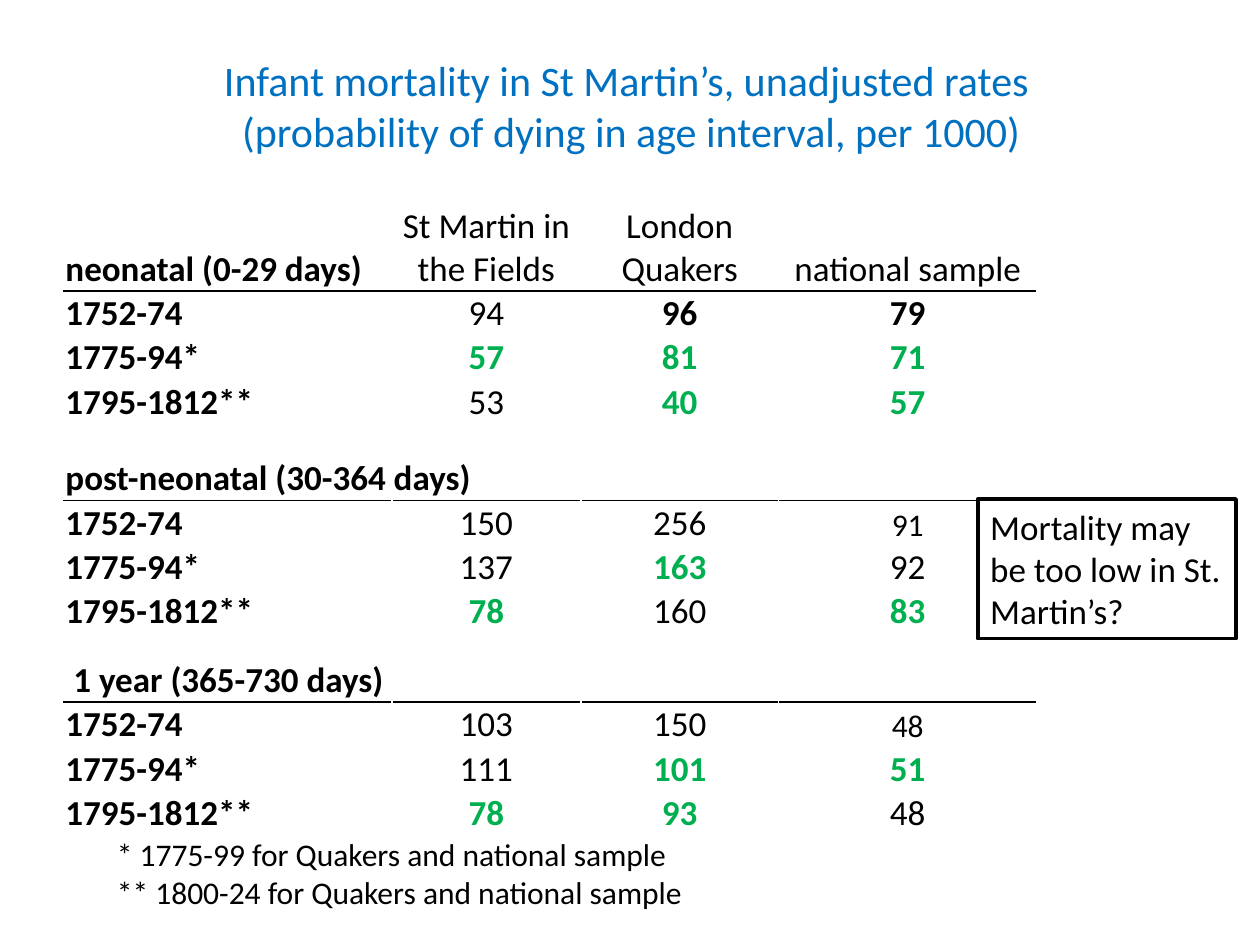
from dataclasses import dataclass
from lxml.etree import SubElement
from pptx import Presentation
from pptx.dml.color import RGBColor
from pptx.enum.shapes import MSO_SHAPE
from pptx.enum.text import MSO_ANCHOR, PP_ALIGN
from pptx.oxml import parse_xml
from pptx.oxml.ns import nsdecls, qn
from pptx.util import Inches, Pt


@dataclass(frozen=True)
class Theme:
    font: str = "Calibri"
    blue: RGBColor = RGBColor(0x00, 0x70, 0xC0)
    green: RGBColor = RGBColor(0x00, 0xB0, 0x50)
    black: RGBColor = RGBColor(0x00, 0x00, 0x00)
    white: RGBColor = RGBColor(0xFF, 0xFF, 0xFF)
    title: Pt = Pt(24)
    body: Pt = Pt(20)
    small: Pt = Pt(18)


theme = Theme()


def add_span(para, text, size, color=theme.black, bold=False):
    span = para.add_run()
    span.text = text
    span.font.name = theme.font
    span.font.size = size
    span.font.bold = bold
    span.font.color.rgb = color


def add_rule(cell, side):
    rule = parse_xml(f'<a:{side} w="12700" {nsdecls("a")}/>')
    fill = SubElement(rule, qn("a:solidFill"))
    SubElement(fill, qn("a:srgbClr"), val=str(theme.black))
    cell._tc.get_or_add_tcPr().insert(0, rule)


deck = Presentation()
deck.slide_width = Inches(10)
deck.slide_height = Inches(7.5)
page = deck.slides.add_slide(deck.slide_layouts[5])

title = page.shapes.title
title.left, title.top = Inches(0.51), Inches(0.21)
title.width, title.height = Inches(9), Inches(1.25)
title.text_frame.vertical_anchor = MSO_ANCHOR.MIDDLE
para = title.text_frame.paragraphs[0]
para.alignment = PP_ALIGN.CENTER
add_span(para, "Infant mortality in St Martin’s, unadjusted rates ", theme.title, theme.blue)
para.add_line_break()
add_span(para, "(probability of dying in age interval, per 1000)", theme.title, theme.blue)

styles = {
    "plain": (theme.body, theme.black, False),
    "bold": (theme.body, theme.black, True),
    "green": (theme.body, theme.green, True),
    "small": (theme.small, theme.black, False),
}
periods = ["1752-74", "1775-94*", "1795-1812**"]
headings = ["St Martin in the Fields", "London Quakers", "national sample"]
sections = [
    ("neonatal (0-29 days)", 0.29, 4, [
        [("94", "plain"), ("96", "bold"), ("79", "bold")],
        [("57", "green"), ("81", "green"), ("71", "green")],
        [("53", "plain"), ("40", "green"), ("57", "green")],
    ]),
    ("post-neonatal (30-364 days)", 0.61, 5, [
        [("150", "plain"), ("256", "plain"), ("91", "small")],
        [("137", "plain"), ("163", "green"), ("92", "plain")],
        [("78", "green"), ("160", "plain"), ("83", "green")],
    ]),
    (" 1 year (365-730 days)", 0.55, 4, [
        [("103", "plain"), ("150", "plain"), ("48", "small")],
        [("111", "plain"), ("101", "green"), ("51", "green")],
        [("78", "green"), ("93", "green"), ("48", "plain")],
    ]),
]
column_widths = [2.6, 1.5, 1.57, 2.05, 0.47]
section_size = 1 + len(periods)

frame = page.shapes.add_table(
    len(sections) * section_size, len(column_widths),
    Inches(0.51), Inches(1.62), Inches(8.19), Inches(4.9))
table = frame.table
table.first_row = False
table.horz_banding = False
for column, width in zip(table.columns, column_widths):
    column.width = Inches(width)
for row in table.rows:
    row.height = Inches(0.29)
for cell in table.iter_cells():
    cell.fill.background()
    cell.vertical_anchor = MSO_ANCHOR.BOTTOM
    cell.margin_left = cell.margin_right = cell.margin_top = Inches(0.01)
    cell.margin_bottom = 0

for section_index, (heading, height, ruled_columns, values) in enumerate(sections):
    top = section_index * section_size
    table.rows[top].height = Inches(height)
    for column in range(ruled_columns):
        add_rule(table.cell(top, column), "lnB")
        add_rule(table.cell(top + 1, column), "lnT")
    if section_index == 0:
        lines = [[(heading, "bold")] + [(text, "plain") for text in headings]]
    else:
        table.cell(top, 0).merge(table.cell(top, ruled_columns - 1))
        lines = [[(heading, "bold")]]
    lines += [[(period, "bold")] + row for period, row in zip(periods, values)]
    for row_index, line in enumerate(lines, start=top):
        for column, (text, style) in enumerate(line):
            para = table.cell(row_index, column).text_frame.paragraphs[0]
            para.alignment = PP_ALIGN.CENTER if column else PP_ALIGN.LEFT
            add_span(para, text, *styles[style])

box = page.shapes.add_shape(
    MSO_SHAPE.RECTANGLE, Inches(7.76), Inches(3.96), Inches(2.05), Inches(1.11))
box.shadow.inherit = False
box.fill.solid()
box.fill.fore_color.rgb = theme.white
box.line.color.rgb = theme.black
box.line.width = Pt(2)
box.text_frame.word_wrap = True
box.text_frame.vertical_anchor = MSO_ANCHOR.TOP
para = box.text_frame.paragraphs[0]
para.alignment = PP_ALIGN.LEFT
add_span(para, "Mortality may be too low in St. Martin’s?", theme.body)

notes = page.shapes.add_textbox(Inches(0.83), Inches(6.58), Inches(4.83), Inches(0.71))
notes.text_frame.word_wrap = False
first_note, second_note = notes.text_frame.paragraphs[0], notes.text_frame.add_paragraph()
add_span(first_note, "* 1775-99 for Quakers and national sample", theme.small)
add_span(second_note, "** 1800-24 for Quakers and national sample", theme.small)

deck.save("out.pptx")
